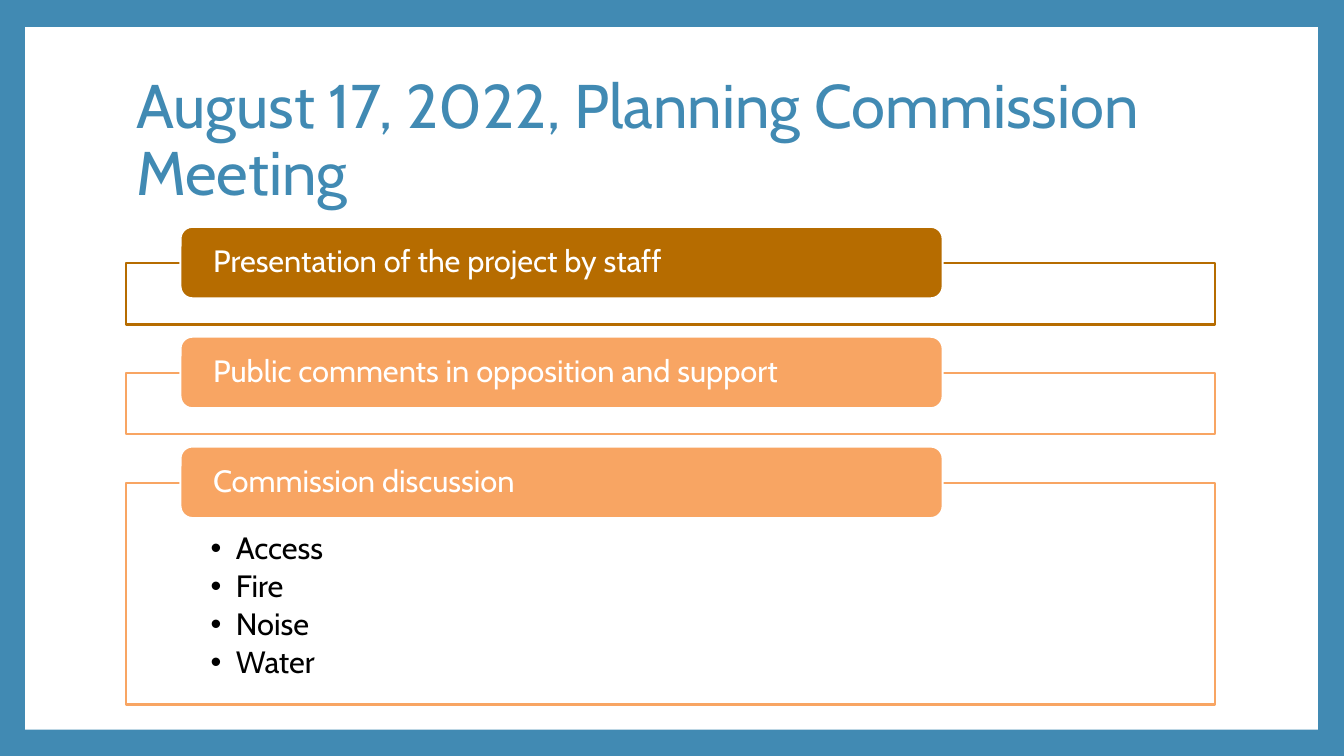
from lxml.etree import SubElement
from pptx import Presentation
from pptx.dml.color import RGBColor
from pptx.enum.shapes import MSO_SHAPE as SHAPE
from pptx.enum.text import MSO_ANCHOR as ANCHOR, MSO_AUTO_SIZE as AUTO, PP_ALIGN as ALIGN
from pptx.oxml.ns import qn
from pptx.util import Inches, Pt

BLUE, WHITE, BLACK = "418AB3", "FFFFFF", "000000"
BROWN, ORANGE = "B66C00", "F8A563"
WIDTH, HEIGHT = 13.33, 7.5
LEFT, CONTENT_W = 1.25, 10.8
LABEL_LEFT, LABEL_W, LABEL_H = LEFT + 0.05 * CONTENT_W, 0.7 * CONTENT_W, 0.71
FIRST_TOP, ROW_STEP, BOX_DROP = 2.25, 1.09, 0.36
SECTIONS = [
    ("Presentation of the project by staff", BROWN, 0.61, []),
    ("Public comments in opposition and support", ORANGE, 0.61, []),
    ("Commission discussion", ORANGE, 2.2, ["Access", "Fire", "Noise", "Water"]),
]


def paint(target, color):
    """Give a fill or a font a solid colour from a hex string."""
    if hasattr(target, "solid"):
        target.solid()
        target = target.fore_color
    else:
        target = target.color
    target.rgb = RGBColor.from_string(color)


def add_box(slide, kind, box, fill, line=None):
    """Add a filled preset shape with an optional outline."""
    sp = slide.shapes.add_shape(kind, *map(Inches, box))
    sp.shadow.inherit = False
    paint(sp.fill, fill)
    if line:
        paint(sp.line.fill, line)
        sp.line.width = Pt(1.5)
    else:
        sp.line.fill.background()
    return sp


def set_text(sp, lines, size, color, anchor, insets=(0.1, 0.05, 0.1, 0.05), after=0):
    """Write left-aligned paragraphs into a shape and format them."""
    tf = sp.text_frame
    tf.text = "\n".join(lines)
    tf.word_wrap, tf.auto_size, tf.vertical_anchor = True, AUTO.NONE, anchor
    tf.margin_left, tf.margin_top, tf.margin_right, tf.margin_bottom = map(Inches, insets)
    for p in tf.paragraphs:
        p.alignment, p.line_spacing, p.space_after = ALIGN.LEFT, 0.9, Pt(after)
        for r in p.runs:
            r.font.size, r.font.name = Pt(size), "Cabin"
            paint(r.font, color)


def add_bullets(sp):
    """Turn the paragraphs of a shape into a bulleted list."""
    for p in sp.text_frame.paragraphs:
        pPr = p._p.get_or_add_pPr()
        pPr.set("marL", str(Inches(0.25)))
        pPr.set("indent", str(Inches(-0.25)))
        SubElement(pPr, qn("a:buFont"), typeface="Arial")
        SubElement(pPr, qn("a:buChar"), char="•")


def add_section(slide, top, label, color, height, items):
    """Add an outlined box with its label tab and bulleted items."""
    box = add_box(slide, SHAPE.RECTANGLE, (LEFT, top + BOX_DROP, CONTENT_W, height), WHITE, color)
    if items:
        set_text(box, items, 22, BLACK, ANCHOR.TOP, (0.84, 0.5, 0.84, 0.17), 3.3)
        add_bullets(box)
    tab = add_box(slide, SHAPE.ROUNDED_RECTANGLE, (LABEL_LEFT, top, LABEL_W, LABEL_H), color, WHITE)
    set_text(tab, [label], 22, WHITE, ANCHOR.MIDDLE, (0.29, 0, 0.29, 0))


def add_title(slide, text):
    """Place and format the title placeholder in front of the panel."""
    sp = slide.shapes.title
    sp.left, sp.top, sp.width, sp.height = map(Inches, (LEFT, 0.67, CONTENT_W, 1.48))
    set_text(sp, [text], 44, BLUE, ANCHOR.MIDDLE)
    slide.shapes._spTree.append(sp._element)


def main():
    """Build the slide and save it."""
    prs = Presentation()
    prs.slide_width, prs.slide_height = Inches(WIDTH), Inches(HEIGHT)
    slide = prs.slides.add_slide(prs.slide_layouts[5])
    paint(slide.background.fill, BLUE)
    add_box(slide, SHAPE.RECTANGLE, (0.25, 0.27, 12.82, 6.97), WHITE)
    add_title(slide, "August 17, 2022, Planning Commission Meeting")
    for i, section in enumerate(SECTIONS):
        add_section(slide, FIRST_TOP + i * ROW_STEP, *section)
    prs.save("out.pptx")


if __name__ == "__main__":
    main()
